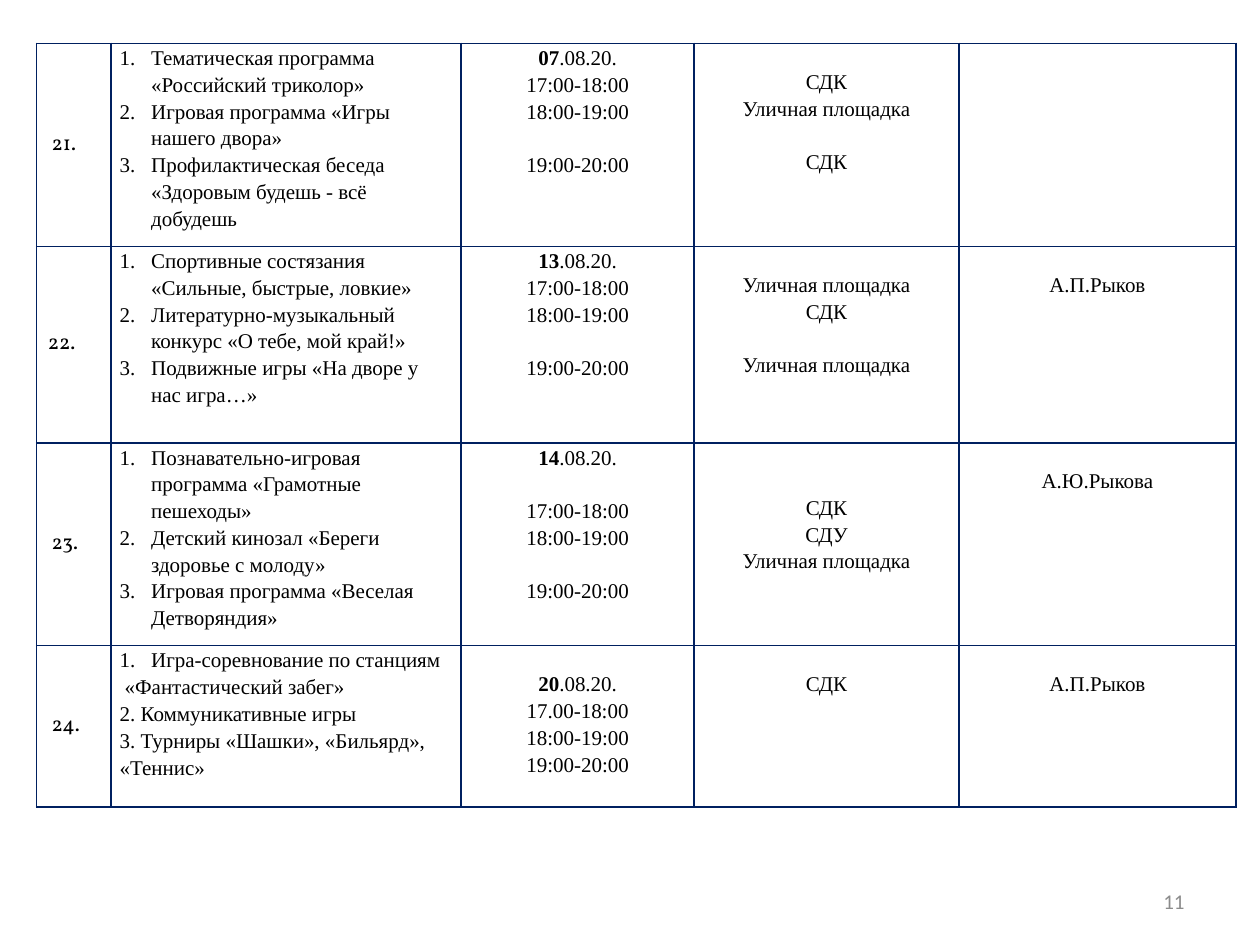
import lxml.etree
import pptx
import pptx.dml.color
import pptx.enum.text
import pptx.oxml.ns
import pptx.util

RGB = pptx.dml.color.RGBColor
ALIGN = pptx.enum.text.PP_ALIGN
ANCHOR = pptx.enum.text.MSO_ANCHOR
INK = RGB(0, 0, 0)
NAVY = RGB(0x00, 0x20, 0x60)
GREY = RGB(0x8C, 0x8C, 0x8C)
WHITE = RGB(255, 255, 255)

# Table grid in percent of the slide's width and height
COLS = [5.9, 27.8, 18.5, 21, 22]
ROWS = [21.2, 20.8, 21.47, 17.07]
LEADS = [0, 0.19, 0.4]  # top inset in inches for text that starts lines lower
GAP = 15.3              # one skipped line, in points

# Each row: number, events, times, places, person; "" skips a line
PLAN = [
    ("21.",
     ["Тематическая программа «Российский триколор»",
      "Игровая программа «Игры нашего двора»",
      "Профилактическая беседа «Здоровым будешь - всё добудешь"],
     ["07.08.20.", "17:00-18:00", "18:00-19:00", "", "19:00-20:00"],
     ["", "СДК", "Уличная площадка", "", "СДК"],
     []),
    ("22.",
     ["Спортивные состязания «Сильные, быстрые, ловкие»",
      "Литературно-музыкальный конкурс «О тебе, мой край!»",
      "Подвижные игры «На дворе у нас игра…»"],
     ["13.08.20.", "17:00-18:00", "18:00-19:00", "", "19:00-20:00"],
     ["", "Уличная площадка", "СДК", "", "Уличная площадка"],
     ["", "А.П.Рыков"]),
    ("23.",
     ["Познавательно-игровая программа «Грамотные пешеходы»",
      "Детский кинозал «Береги здоровье с молоду»",
      "Игровая программа «Веселая Детворяндия»"],
     ["14.08.20.", "", "17:00-18:00", "18:00-19:00", "", "19:00-20:00"],
     ["", "", "СДК", "СДУ", "Уличная площадка"],
     ["", "А.Ю.Рыкова"]),
    ("24.",
     ["Игра-соревнование по станциям",
      "«Фантастический забег»",
      "2. Коммуникативные игры",
      "3. Турниры «Шашки», «Бильярд», «Теннис»"],
     ["", "20.08.20.", "17.00-18:00", "18:00-19:00", "19:00-20:00"],
     ["", "СДК"],
     ["", "А.П.Рыков"]),
]


def put(item, form):
    for key, value in form.items():
        setattr(item, key, value)


class Page:
    base = {"size": pptx.util.Pt(12), "name": "Times New Roman"}

    def __init__(self, deck):
        self.wide, self.high = deck.slide_width, deck.slide_height
        self.slide = deck.slides.add_slide(deck.slide_layouts[6])

    def x(self, part):
        return round(self.wide * part / 100)

    def y(self, part):
        return round(self.high * part / 100)

    def run(self, para, text, color=INK, **form):
        font = para.add_run()
        font.text = text
        put(font.font, {**self.base, **form})
        font.font.color.rgb = color

    def inset(self, frame, side, top, low):
        put(frame, {"margin_left": pptx.util.Inches(side),
                    "margin_right": pptx.util.Inches(side),
                    "margin_top": pptx.util.Inches(top),
                    "margin_bottom": pptx.util.Inches(low)})

    def label(self, text, left, top, width, height):
        box = self.slide.shapes.add_textbox(
            self.x(left), self.y(top), self.x(width), self.y(height))
        frame = box.text_frame
        put(frame, {"word_wrap": True, "vertical_anchor": ANCHOR.MIDDLE})
        para = frame.paragraphs[0]
        para.alignment = ALIGN.RIGHT
        self.run(para, text, GREY, name="Calibri")

    def table(self, left, top, cols, rows):
        grid = self.slide.shapes.add_table(
            len(rows), len(cols), self.x(left), self.y(top),
            self.x(sum(cols)), self.y(sum(rows))).table
        put(grid, {"first_row": False, "horz_banding": False})
        for col, part in zip(grid.columns, cols):
            col.width = self.x(part)
        for row, part in zip(grid.rows, rows):
            row.height = self.y(part)
        for cell in grid.iter_cells():
            self.frame(cell)
        return grid

    def frame(self, cell):
        qn, sub = pptx.oxml.ns.qn, lxml.etree.SubElement
        prop = cell._tc.get_or_add_tcPr()
        for side in ("lnL", "lnR", "lnT", "lnB"):
            line = sub(prop, qn("a:" + side), w=str(pptx.util.Pt(1)))
            sub(sub(line, qn("a:solidFill")), qn("a:srgbClr"), val=str(NAVY))
        cell.fill.solid()
        cell.fill.fore_color.rgb = WHITE

    def number(self, cell, text, side):
        self.inset(cell, side, 0.04, 0.04)
        cell.vertical_anchor = ANCHOR.MIDDLE
        self.run(cell.text_frame.paragraphs[0], text, name="Vollkorn")

    def lines(self, cell, texts, align=ALIGN.CENTER):
        """Fill a cell and return its paragraphs."""
        skip, first, paras = 0, True, []
        self.inset(cell, 0.07, 0, 0)
        for text in texts:
            if not text:
                skip += 1
                continue
            if first:
                para = cell.text_frame.paragraphs[0]
                cell.margin_top = pptx.util.Inches(LEADS[skip])
            else:
                para = cell.text_frame.add_paragraph()
                para.space_before = pptx.util.Pt(GAP * skip)
            put(para, {"alignment": align, "line_spacing": 1.15})
            if text.endswith(".08.20."):
                self.run(para, text[:2], bold=True)
                text = text[2:]
            self.run(para, text)
            paras.append(para)
            skip, first = 0, False
        return paras

    def indent(self, para, left, hang=0):
        prop = para._p.get_or_add_pPr()
        prop.set("marL", str(pptx.util.Inches(left)))
        prop.set("indent", str(pptx.util.Inches(-hang)))
        return prop

    def count(self, para):
        prop = self.indent(para, 0.25, 0.25)
        lxml.etree.SubElement(prop, pptx.oxml.ns.qn("a:buFont"), typeface="+mj-lt")
        lxml.etree.SubElement(
            prop, pptx.oxml.ns.qn("a:buAutoNum"), type="arabicPeriod")


def main():
    deck = pptx.Presentation()
    put(deck, {"slide_width": pptx.util.Inches(10),
               "slide_height": pptx.util.Inches(7.5)})
    page = Page(deck)

    # Page number
    page.label("11", 71.7, 92.67, 23.3, 5.33)

    # Event plan
    grid = page.table(2.9, 4.6, COLS, ROWS)
    for row, (mark, events, *rest) in enumerate(PLAN):
        page.number(grid.cell(row, 0), mark, 0.09 if mark == "22." else 0.12)
        paras = page.lines(grid.cell(row, 1), events, ALIGN.LEFT)
        typed = any(text.startswith("2.") for text in events)
        for para in paras[:1] if typed else paras:
            page.count(para)
        if typed:
            page.indent(paras[1], 0.04)
        for col, texts in enumerate(rest, 2):
            page.lines(grid.cell(row, col), texts)

    deck.save("out.pptx")


if __name__ == "__main__":
    main()
